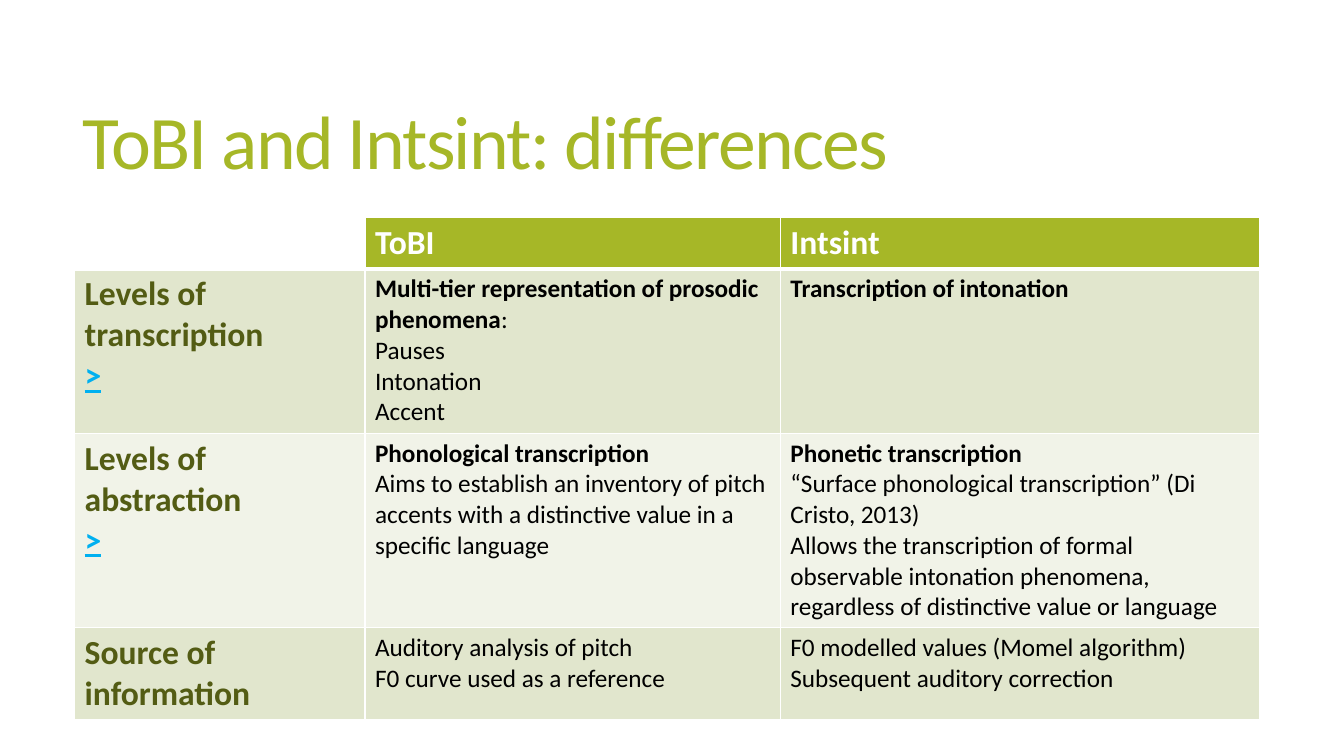
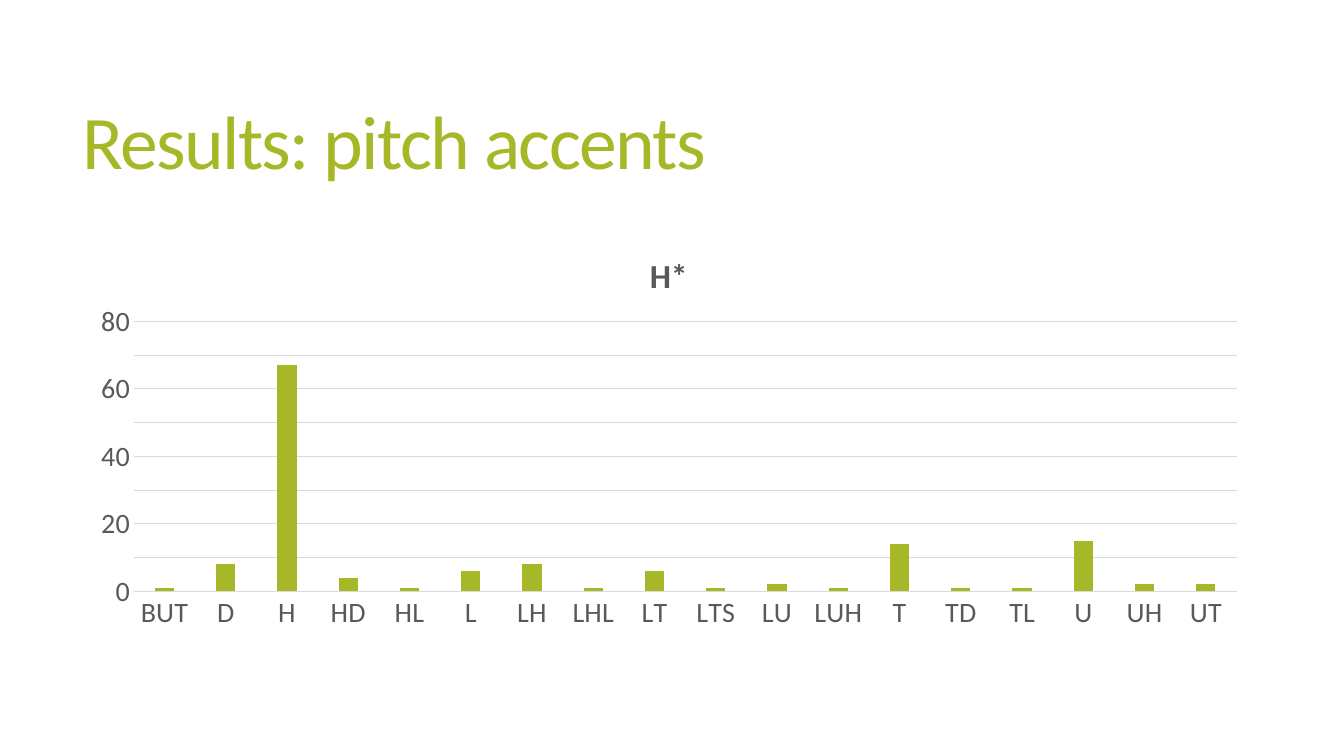
from copy import deepcopy
from lxml.etree import SubElement as Sub
from pptx import Presentation
from pptx.chart.data import CategoryChartData as Data
from pptx.dml.color import RGBColor as RGB
from pptx.enum.chart import XL_CHART_TYPE as Kind, XL_TICK_MARK as Tick
from pptx.enum.text import MSO_ANCHOR as Anchor, PP_ALIGN as Align
from pptx.oxml import parse_xml
from pptx.oxml.ns import nsdecls, qn
from pptx.util import Inches, Pt

FONT = "Calibri"
HEX = {"lime": "A6B727", "olive": "535C14", "cyan": "00B0F0", "dark": "E1E6CD",
       "pale": "F1F3E8", "white": "FFFFFF", "black": "000000",
       "gray": "595959", "grid": "D9D9D9"}
COL = {name: RGB.from_string(code) for name, code in HEX.items()}

deck = Presentation()
deck.slide_width, deck.slide_height = Inches(13.33), Inches(7.5)


def style(font, size, color, bold=False):
    font.name, font.size, font.bold = FONT, Pt(size), bold
    font.color.rgb = COL[color]


def place(part, **spots):
    """Give a chart part a fixed layout, in fractions of the chart."""
    for old in part.findall(qn("c:layout")):
        part.remove(old)
    lay = parse_xml(f"<c:layout {nsdecls('c')}><c:manualLayout/></c:layout>")
    for key, val in spots.items():
        Sub(lay[0], qn("c:" + key)).set("val", str(val))
    tx = part.find(qn("c:tx"))
    part.insert(0 if tx is None else part.index(tx) + 1, lay)


# Slides with their titles
slides = []
for text in ("ToBI and Intsint: differences", "Results: pitch accents"):
    slide = deck.slides.add_slide(deck.slide_layouts[5])
    title = slide.shapes.title
    title.left, title.top = Inches(0.72), Inches(0.55)
    title.width, title.height = Inches(11.78), Inches(1.81)
    title.text_frame.text = text
    title.text_frame.vertical_anchor = Anchor.MIDDLE
    para = title.text_frame.paragraphs[0]
    para.alignment, para.line_spacing = Align.LEFT, 0.85
    style(para.font, 54, "lime")
    para.runs[0].font._element.set("spc", "-120")
    slides.append(slide)

# Table: each cell lists paragraphs as (text, size, colour, bold)
link = (">", 24, "cyan", True)
lead = (18, "black", True)
body = (18, "black", False)
side = (24, "olive", True)
head = (24, "white", True)
rows = [
    [[], [("ToBI", *head)], [("Intsint", *head)]],
    [[("Levels of transcription", *side), link],
     [("Multi-tier representation of prosodic phenomena", *lead),
      ("Pauses", *body), ("Intonation", *body), ("Accent", *body)],
     [("Transcription of intonation", *lead)]],
    [[("Levels of abstraction", *side), link],
     [("Phonological transcription", *lead),
      ("Aims to establish an inventory of pitch accents with a "
       "distinctive value in a specific language", *body)],
     [("Phonetic transcription", *lead),
      ("“Surface phonological transcription” (Di Cristo, 2013)", *body),
      ("Allows the transcription of formal observable intonation "
       "phenomena, regardless of distinctive value or language", *body)]],
    [[("Source of information", *side)],
     [("Auditory analysis of pitch", *body),
      ("F0 curve used as a reference", *body)],
     [("F0 modelled values (Momel algorithm)", *body),
      ("Subsequent auditory correction", *body)]],
]
table = slides[0].shapes.add_table(
    4, 3, Inches(0.74), Inches(2.16), Inches(11.76), Inches(4.97)).table
for col, wide in zip(table.columns, (2.88, 4.12, 4.75)):
    col.width = Inches(wide)
for row, high in zip(table.rows, (0.5, 1.63, 1.93, 0.91)):
    row.height = Inches(high)

for r, row in enumerate(rows):
    for c, paras in enumerate(row):
        cell = table.cell(r, c)
        if paras:
            cell.fill.solid()
            fill = "lime" if r == 0 else "dark" if r % 2 else "pale"
            cell.fill.fore_color.rgb = COL[fill]
        else:
            cell.fill.background()
        cell.text = "\n".join(item[0] for item in paras)
        for para, (text, *look) in zip(cell.text_frame.paragraphs, paras):
            style(para.font, *look)
            para.font.underline = text == ">"
        # White borders, thicker under the header
        for i, edge in enumerate("LRTB"):
            thick = (r, edge) in ((0, "B"), (1, "T"))
            cell._tc.tcPr.insert(i, parse_xml(
                f'<a:ln{edge} {nsdecls("a")} w="{Pt(3 if thick else 1)}">'
                f'<a:solidFill><a:srgbClr val="{HEX["white"]}"/></a:solidFill>'
                f'</a:ln{edge}>'))

colon = table.cell(1, 1).text_frame.paragraphs[0].add_run()
colon.text, colon.font.bold = ":", False

# Chart
data = Data()
data.categories = "BUT D H HD HL L LH LHL LT LTS LU LUH T TD TL U UH UT".split()
data.add_series("Series 1", (1, 8, 67, 4, 1, 6, 8, 1, 6, 1, 2, 1, 14, 1, 1, 15, 2, 2))
chart = slides[1].shapes.add_chart(
    Kind.COLUMN_CLUSTERED, Inches(0.74), Inches(2.2), Inches(11.76),
    Inches(4.12), data).chart
style(chart.font, 20, "gray")
chart.has_legend = False
chart.has_title = True
chart.chart_title.text_frame.text = "H*"
style(chart.chart_title.text_frame.paragraphs[0].font, 24, "gray", True)

plot = chart.plots[0]
plot.gap_width, plot.overlap, plot.vary_by_categories = 219, -27, False
bars = plot.series[0].format.fill
bars.solid()
bars.fore_color.rgb = COL["lime"]

# Axes and gridlines
cats, vals = chart.category_axis, chart.value_axis
for axis in (cats, vals):
    axis.major_tick_mark = axis.minor_tick_mark = Tick.NONE
    style(axis.tick_labels.font, 20, "gray")
vals.minimum_scale, vals.maximum_scale = 0, 80
vals.major_unit, vals.minor_unit = 20, 10
vals.has_major_gridlines = vals.has_minor_gridlines = True
vals.format.line.fill.background()
for part in (cats, vals.major_gridlines):
    part.format.line.color.rgb = COL["grid"]
    part.format.line.width = Pt(0.75)
major, minor = (vals._element.find(qn(f"c:{size}Gridlines"))
                for size in ("major", "minor"))
minor.append(deepcopy(major.find(qn("c:spPr"))))

place(chart.chart_title._element, xMode="edge", yMode="edge", x=0.48, y=0.06)
place(chart._chartSpace.chart.plotArea, layoutTarget="inner", xMode="edge",
      yMode="edge", x=0.05, y=0.24, w=0.93, h=0.65)

deck.save("out.pptx")
